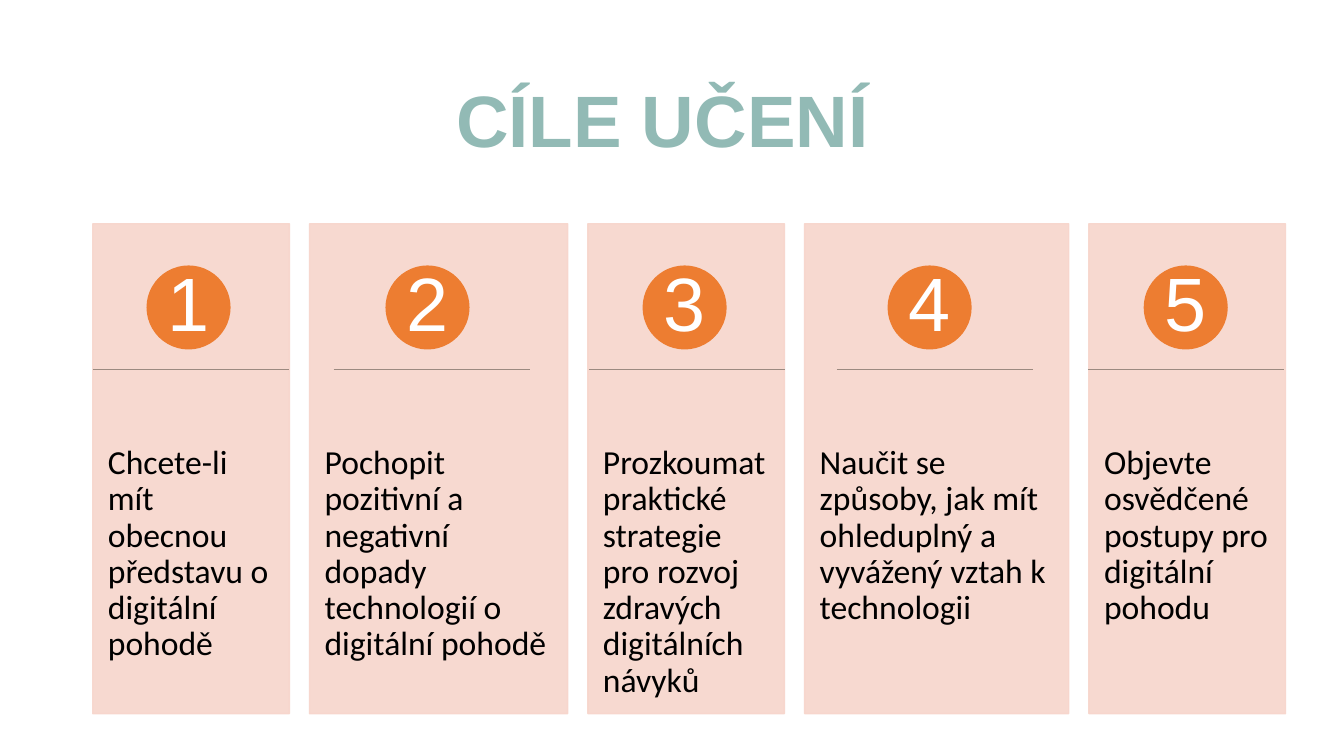
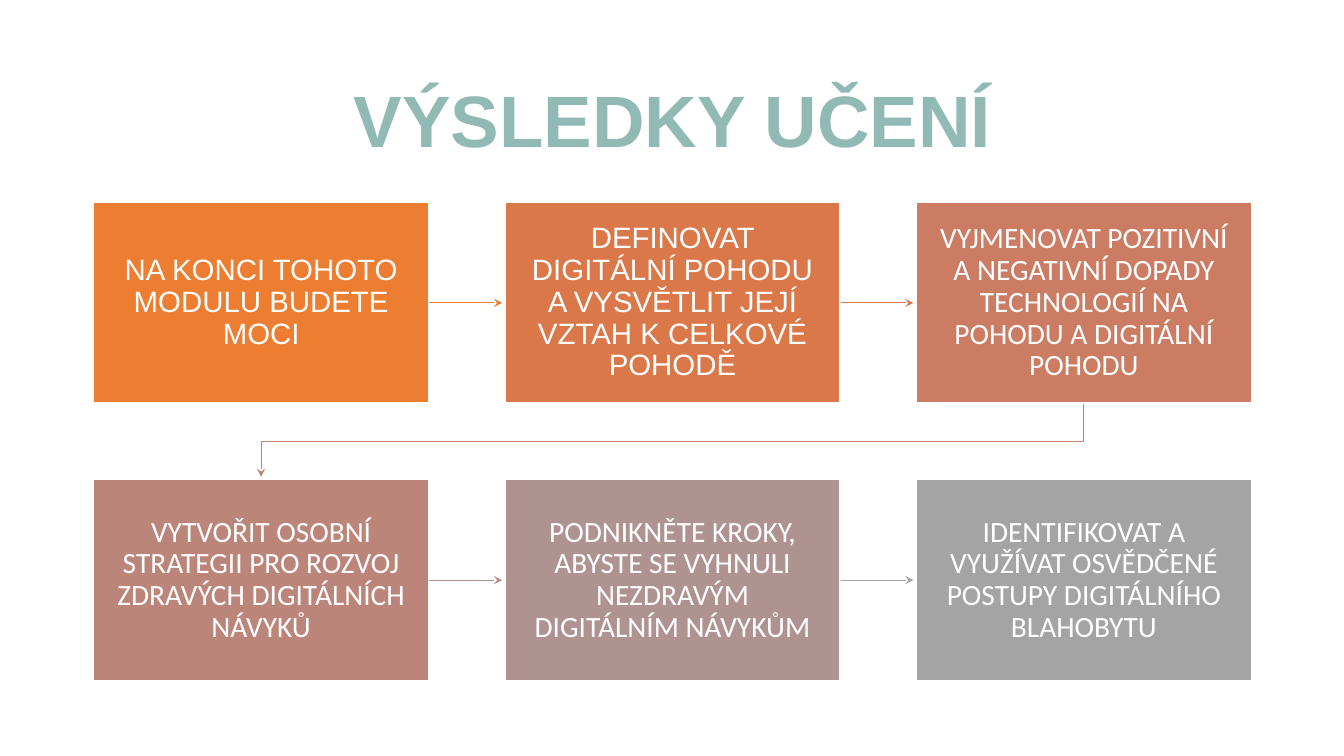
import lxml.etree
import pptx
import pptx.dml.color
import pptx.enum.shapes
import pptx.enum.text
import pptx.oxml.ns
import pptx.util

Inches = pptx.util.Inches
Pt = pptx.util.Pt
Shape = pptx.enum.shapes.MSO_SHAPE
Anchor = pptx.enum.text.MSO_ANCHOR
Align = pptx.enum.text.PP_ALIGN
qn = pptx.oxml.ns.qn

COLORS = {
    "title": "92BAB5",
    "accent": "ED7D31",
    "card": "F7D5CB",
    "rule": "9C8A80",
    "white": "FFFFFF",
    "black": "000000",
    "step_1": "ED7D31",
    "step_2": "DB784A",
    "step_3": "CB7C63",
    "step_4": "BC857A",
    "step_5": "AF9390",
    "step_6": "A4A4A4",
    "arrow_1": "ED7D31",
    "arrow_2": "D77850",
    "arrow_3": "C47F6E",
    "arrow_4": "B38E8A",
    "arrow_5": "A4A4A4",
}

CARD_LEFT, CARD_TOP, CARD_HEIGHT, CARD_GAP = 0.92, 2.22, 4.86, 0.2
BADGE_TOP, BADGE_SIZE = 2.64, 0.82
RULE_TOP, RULE_WIDTH = 3.67, 1.95

STEP_LEFT, STEP_TOP, STEP_WIDTH, STEP_HEIGHT = 0.93, 2.01, 3.32, 1.99
STEP_PITCH_X, STEP_PITCH_Y = 4.08, 2.75
STEP_COLUMNS, ARROW_LENGTH = 3, 0.73

# width, badge left, rule left, text
GOALS = [
    (1.95, 1.46, 0.92, "Chcete-li mít obecnou představu o digitální pohodě"),
    (2.56, 3.83, 3.31, "Pochopit pozitivní a negativní dopady technologií o digitální pohodě"),
    (1.95, 6.38, 5.84, "Prozkoumat praktické strategie pro rozvoj zdravých digitálních návyků"),
    (2.62, 8.81, 8.3, "Naučit se způsoby, jak mít ohleduplný a vyvážený vztah k technologii"),
    (1.95, 11.35, 10.79, "Objevte osvědčené postupy pro digitální pohodu"),
]

OUTCOMES = [
    ("Arial", "NA KONCI TOHOTO MODULU BUDETE MOCI"),
    ("Arial", "DEFINOVAT DIGITÁLNÍ POHODU A VYSVĚTLIT JEJÍ VZTAH K CELKOVÉ POHODĚ"),
    ("Calibri", "VYJMENOVAT POZITIVNÍ A NEGATIVNÍ DOPADY TECHNOLOGIÍ NA POHODU A DIGITÁLNÍ POHODU"),
    ("Calibri", "VYTVOŘIT OSOBNÍ STRATEGII PRO ROZVOJ ZDRAVÝCH DIGITÁLNÍCH NÁVYKŮ"),
    ("Calibri", "PODNIKNĚTE KROKY, ABYSTE SE VYHNULI NEZDRAVÝM DIGITÁLNÍM NÁVYKŮM"),
    ("Calibri", "IDENTIFIKOVAT A VYUŽÍVAT OSVĚDČENÉ POSTUPY DIGITÁLNÍHO BLAHOBYTU"),
]


def rgb(color):
    """Return the named colour."""
    return pptx.dml.color.RGBColor.from_string(COLORS[color])


def write_text(box, text, font, size, color, align=Align.CENTER,
               anchor=Anchor.MIDDLE, insets=(0.1, 0.05), bold=False):
    """Write one formatted paragraph with (side, vertical) insets."""
    frame = box.text_frame
    frame.text = text
    frame.word_wrap = True
    frame.auto_size = pptx.enum.text.MSO_AUTO_SIZE.NONE
    frame.vertical_anchor = anchor
    frame.margin_left = frame.margin_right = Inches(insets[0])
    frame.margin_top = frame.margin_bottom = Inches(insets[1])
    para = frame.paragraphs[0]
    para.alignment = align
    para.line_spacing = 0.9
    span = para.runs[0]
    span.font.name = font
    span.font.size = Pt(size)
    span.font.bold = bold
    span.font.color.rgb = rgb(color)


def add_page(deck, title):
    """Add a page with the shared title style."""
    page = deck.slides.add_slide(deck.slide_layouts[5])
    box = page.shapes.title
    box.left, box.top = Inches(0.92), Inches(0.61)
    box.width, box.height = Inches(11.5), Inches(1.24)
    write_text(box, title, "Arial", 52, "title", bold=True)
    return page


def add_block(page, kind, left, top, width, height, fill, line):
    """Add a filled preset shape with a one-point outline."""
    block = page.shapes.add_shape(
        kind, Inches(left), Inches(top), Inches(width), Inches(height))
    block.shadow.inherit = False
    block.fill.solid()
    block.fill.fore_color.rgb = rgb(fill)
    block.line.color.rgb = rgb(line)
    block.line.width = Pt(1)
    return block


def set_opacity(block, percent):
    """Make the fill and outline partly transparent."""
    for tint in block.element.spPr.iter(qn("a:srgbClr")):
        alpha = lxml.etree.SubElement(tint, qn("a:alpha"))
        alpha.set("val", str(percent * 1000))


def add_line(page, start, end, color):
    """Add a thin straight connector."""
    line = page.shapes.add_connector(
        pptx.enum.shapes.MSO_CONNECTOR.STRAIGHT,
        *(Inches(length) for length in (*start, *end)))
    line.line.color.rgb = rgb(color)
    line.line.width = Pt(0.75)
    lxml.etree.SubElement(line.element.spPr, qn("a:effectLst"))
    return line


def add_bent_line(page, points, color):
    """Add a thin open line through several points."""
    corners = [(Inches(x), Inches(y)) for x, y in points]
    builder = page.shapes.build_freeform(*corners[0], scale=1.0)
    builder.add_line_segments(corners[1:], close=False)
    line = builder.convert_to_shape()
    line.shadow.inherit = False
    line.fill.background()
    line.line.color.rgb = rgb(color)
    line.line.width = Pt(0.75)
    return line


def add_arrowhead(line):
    """Put a stealth arrowhead at the end of a line."""
    outline = line.element.spPr.find(qn("a:ln"))
    lxml.etree.SubElement(outline, qn("a:tailEnd")).set("type", "stealth")


def add_goal(page, number, left, goal):
    """Add a card with a numbered badge and a rule."""
    width, badge_left, rule_left, text = goal
    card = add_block(page, Shape.RECTANGLE, left, CARD_TOP, width,
                     CARD_HEIGHT, "card", "card")
    set_opacity(card, 90)
    write_text(card, text, "Calibri", 24, "black", Align.LEFT, Anchor.TOP, (0.15, 0))
    card.text_frame.margin_top = Inches(2.2)
    badge = add_block(page, Shape.OVAL, badge_left, BADGE_TOP, BADGE_SIZE,
                      BADGE_SIZE, "accent", "accent")
    write_text(badge, str(number), "Arial", 54, "white", insets=(0, 0))
    add_line(page, (rule_left, RULE_TOP), (rule_left + RULE_WIDTH, RULE_TOP), "rule")


def step_position(index):
    """Return the left and top of a step in the grid."""
    row, column = divmod(index, STEP_COLUMNS)
    return STEP_LEFT + column * STEP_PITCH_X, STEP_TOP + row * STEP_PITCH_Y


def add_step(page, index, font, text):
    """Add one step box."""
    left, top = step_position(index)
    step = add_block(page, Shape.RECTANGLE, left, top, STEP_WIDTH,
                     STEP_HEIGHT, f"step_{index + 1}", "white")
    write_text(step, text, font, 21, "white", insets=(0.16, 0.17))


def add_step_arrow(page, index):
    """Add the arrow from a step to the next one."""
    left, top = step_position(index)
    next_left, next_top = step_position(index + 1)
    color = f"arrow_{index + 1}"
    if next_top == top:
        start, middle = left + STEP_WIDTH, top + STEP_HEIGHT / 2
        line = add_line(page, (start, middle), (start + ARROW_LENGTH, middle), color)
    else:
        start, end = left + STEP_WIDTH / 2, next_left + STEP_WIDTH / 2
        bottom = top + STEP_HEIGHT
        bend = (bottom + next_top) / 2
        line = add_bent_line(page, [(start, bottom), (start, bend), (end, bend),
                                    (end, bottom + ARROW_LENGTH)], color)
    add_arrowhead(line)


def main():
    """Build and save the deck."""
    deck = pptx.Presentation()
    deck.slide_width, deck.slide_height = Inches(13.33), Inches(7.5)

    page = add_page(deck, "CÍLE UČENÍ ")
    left = CARD_LEFT
    for number, goal in enumerate(GOALS, 1):
        add_goal(page, number, left, goal)
        left += goal[0] + CARD_GAP

    page = add_page(deck, "VÝSLEDKY UČENÍ")
    for index, (font, text) in enumerate(OUTCOMES):
        if index + 1 < len(OUTCOMES):
            add_step_arrow(page, index)
        add_step(page, index, font, text)

    deck.save("out.pptx")


if __name__ == "__main__":
    main()
